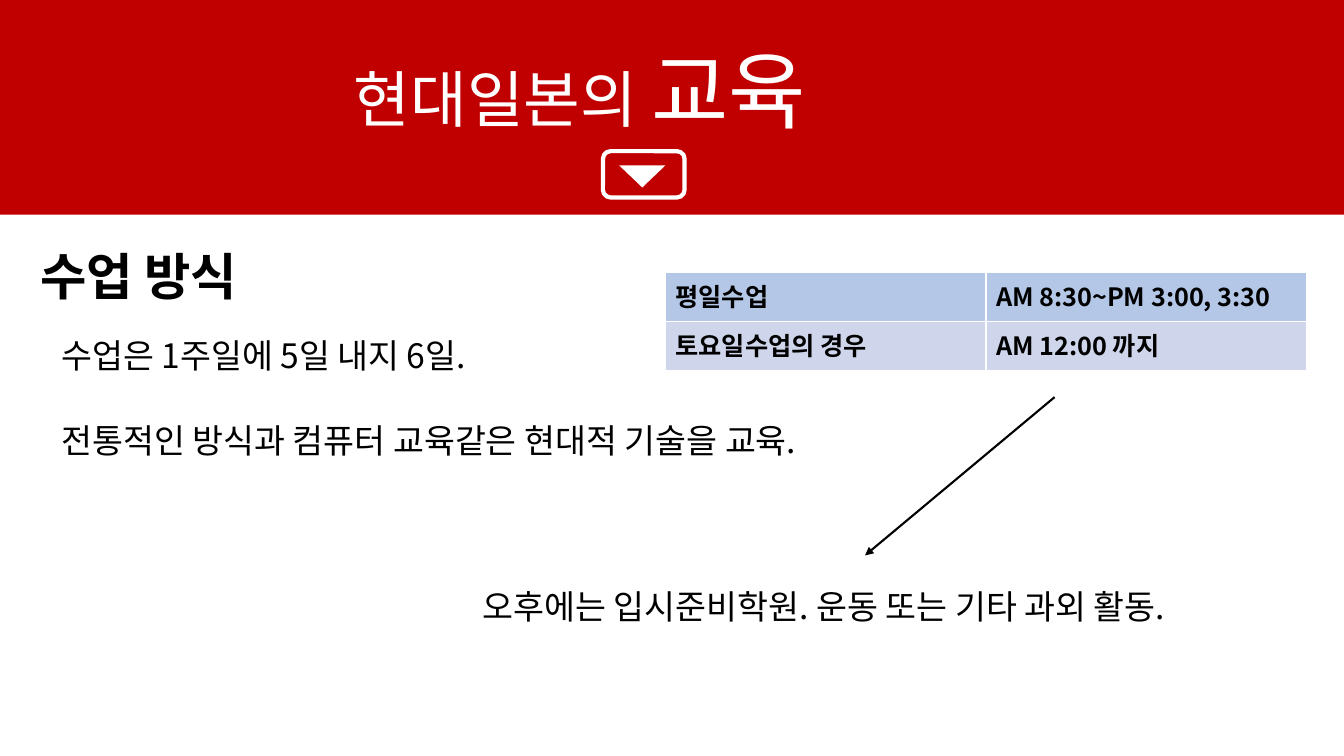
from dataclasses import dataclass

from lxml import etree
from pptx import Presentation
from pptx.dml.color import RGBColor
from pptx.enum.shapes import MSO_CONNECTOR, MSO_SHAPE
from pptx.enum.text import MSO_ANCHOR, MSO_AUTO_SIZE, PP_ALIGN
from pptx.oxml.ns import qn
from pptx.util import Emu, Pt

RECTANGLE = MSO_SHAPE.RECTANGLE
ROUNDED = MSO_SHAPE.ROUNDED_RECTANGLE
TRIANGLE = MSO_SHAPE.ISOSCELES_TRIANGLE
STRAIGHT = MSO_CONNECTOR.STRAIGHT
LEFT = PP_ALIGN.LEFT
MIDDLE = MSO_ANCHOR.MIDDLE
FIXED = MSO_AUTO_SIZE.NONE
GROW = MSO_AUTO_SIZE.SHAPE_TO_FIT_TEXT

EMU_PER_PX = 9144  # 100 px to the inch
TITLE_ONLY = 5


@dataclass(frozen=True)
class Theme:
    font: str = "Noto Sans CJK KR"
    ink: str = "000000"
    white: str = "FFFFFF"
    red: str = "C00000"
    row_fills: tuple = ("B4C7E7", "CFD5EA")
    title: int = 44
    title_accent: int = 60
    heading: int = 36
    body: int = 24
    table: int = 18


def px(*lengths):
    return [Emu(length * EMU_PER_PX) for length in lengths]


def rgb(value):
    return RGBColor.from_string(value)


def write(para, text, *, font, size, color, bold=False):
    """Append text to a paragraph as one formatted span."""
    span = para.add_run()
    span.text = text
    span.font.name = font
    span.font.size = Pt(size)
    span.font.bold = bold
    span.font.color.rgb = rgb(color)
    east_asian = etree.SubElement(span.font._element, qn("a:ea"))
    east_asian.set("typeface", font)


class SlideBuilder:
    def __init__(self, page, theme):
        self.page = page
        self.theme = theme

    def title(self, spans, at, inset):
        """Fill the title placeholder with (text, size) spans."""
        title = self.page.shapes.title
        title.left, title.top, title.width, title.height = px(*at)
        frame = title.text_frame
        frame.auto_size = FIXED
        frame.word_wrap = True
        frame.vertical_anchor = MIDDLE
        frame.margin_left = px(inset)[0]
        para = frame.paragraphs[0]
        para.alignment = LEFT
        for text, size in spans:
            write(para, text, font=self.theme.font, size=size, color=self.theme.white)

    def shape(self, kind, at, fill=None, line=None, width=1, rotation=0):
        shape = self.page.shapes.add_shape(kind, *px(*at))
        shape.shadow.inherit = False
        shape.rotation = rotation
        if fill:
            shape.fill.solid()
            shape.fill.fore_color.rgb = rgb(fill)
        else:
            shape.fill.background()
        if line:
            shape.line.color.rgb = rgb(line)
            shape.line.width = Pt(width)
        else:
            shape.line.fill.background()
        return shape

    def band(self, at):
        """Draw the red band behind the title."""
        band = self.shape(RECTANGLE, at, fill=self.theme.red)
        self.page.shapes.title.element.addprevious(band.element)

    def text(self, text, at, size, bold=False):
        box = self.page.shapes.add_textbox(*px(*at))
        frame = box.text_frame
        frame.word_wrap = True
        frame.auto_size = GROW
        write(frame.paragraphs[0], text, font=self.theme.font, size=size,
              color=self.theme.ink, bold=bold)

    def table(self, rows, at):
        frame = self.page.shapes.add_table(len(rows), len(rows[0]), *px(*at))
        for r, (row, fill) in enumerate(zip(rows, self.theme.row_fills)):
            for c, text in enumerate(row):
                cell = frame.table.cell(r, c)
                cell.fill.solid()
                cell.fill.fore_color.rgb = rgb(fill)
                write(cell.text_frame.paragraphs[0], text, font=self.theme.font,
                      size=self.theme.table, color=self.theme.ink, bold=True)

    def arrow(self, start, end, width):
        arrow = self.page.shapes.add_connector(STRAIGHT, *px(*start, *end))
        arrow.line.color.rgb = rgb(self.theme.ink)
        arrow.line.width = Pt(width)
        etree.SubElement(arrow.line._get_or_add_ln(), qn("a:tailEnd")).set("type", "triangle")
        etree.SubElement(arrow.element.spPr, qn("a:effectLst"))


def main():
    deck = Presentation()
    deck.slide_width, deck.slide_height = px(1333, 750)
    page = deck.slides.add_slide(deck.slide_layouts[TITLE_ONLY])
    theme = Theme()
    slide = SlideBuilder(page, theme)

    slide.band((0, 0, 1333, 213))
    slide.title([("현대일본의 ", theme.title), ("교육", theme.title_accent)],
                at=(256, -5, 1018, 186), inset=95)
    slide.shape(TRIANGLE, (614, 164, 46, 22), fill=theme.white, rotation=180)
    slide.shape(ROUNDED, (598, 150, 81, 46), line=theme.white, width=3)

    slide.text("수업 방식", (30, 238, 522, 71), theme.heading, bold=True)
    slide.text("수업은 1주일에 5일 내지 6일.", (51, 327, 597, 50), theme.body)
    slide.text("전통적인 방식과 컴퓨터 교육같은 현대적 기술을 교육.",
               (51, 412, 1028, 50), theme.body)
    slide.table([("평일수업", "AM 8:30~PM 3:00, 3:30"),
                 ("토요일수업의 경우", "AM 12:00 까지")], (660, 270, 636, 98))
    slide.arrow((1046, 394), (858, 551), width=1.5)
    slide.text("오후에는 입시준비학원. 운동 또는 기타 과외 활동.",
               (469, 576, 777, 50), theme.body)

    deck.save("out.pptx")


if __name__ == "__main__":
    main()
